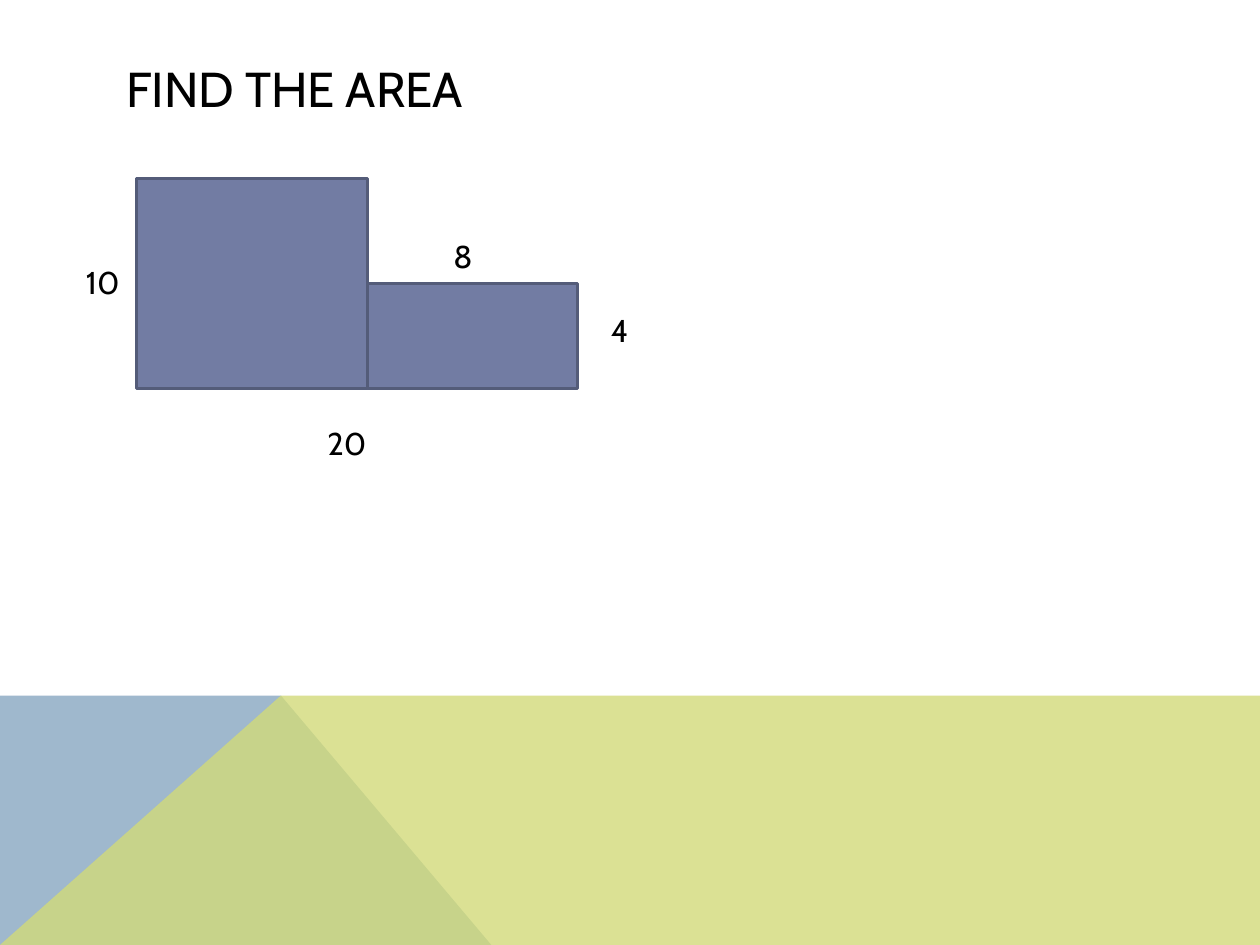
from dataclasses import dataclass

from lxml import etree
from pptx import Presentation
from pptx.dml.color import RGBColor
from pptx.enum.shapes import MSO_SHAPE
from pptx.enum.text import MSO_ANCHOR, MSO_AUTO_SIZE, PP_ALIGN
from pptx.oxml.ns import qn
from pptx.shapes.base import BaseShape
from pptx.slide import Slide
from pptx.text.text import TextFrame
from pptx.util import Inches, Length, Pt

RECTANGLE = MSO_SHAPE.RECTANGLE
MIDDLE, TOP = MSO_ANCHOR.MIDDLE, MSO_ANCHOR.TOP
LEFT = PP_ALIGN.LEFT
NO_AUTOFIT, GROW = MSO_AUTO_SIZE.NONE, MSO_AUTO_SIZE.SHAPE_TO_FIT_TEXT

SLIDE_WIDTH, SLIDE_HEIGHT = Inches(10), Inches(7.5)
TITLE_ONLY_LAYOUT = 5
CELLS_PER_INCH = 12


@dataclass(frozen=True)
class Theme:
    font: str = "Cabin"
    title_size: int = 28
    label_size: int = 18
    line_width: int = 2
    text: str = "000000"
    figure_fill: str = "727CA3"
    figure_line: str = "545C79"
    blue_band: str = "9FB8CD"
    green_band: str = "D2DA7A"


@dataclass(frozen=True)
class Box:
    """A place on the grid, in cells."""
    column: float
    row: float
    columns: float
    rows: float


@dataclass(frozen=True)
class Label:
    text: str
    box: Box


@dataclass(frozen=True)
class Band:
    """A polygon whose points are shares of the slide's width and height."""
    points: tuple[tuple[float, float], ...]
    color: str
    opacity: float = 1


THEME = Theme()

# Footer bands meet at a peak on the horizon
HORIZON, PEAK, BLUE_FOOT = 0.736, 0.223, 0.39
BANDS = (
    Band(((0, 1), (0, HORIZON), (PEAK, HORIZON), (BLUE_FOOT, 1)), THEME.blue_band),
    Band(((0, 1), (PEAK, HORIZON), (1, HORIZON), (1, 1)), THEME.green_band, 0.8),
)

# Compound figure: the short rectangle stands beside the tall one
TALL = Box(13, 17, 22, 20)
SHORT = Box(TALL.column + TALL.columns, 27, 20, 10)

LABELS = (
    Label("20", Box(30, 39.8, 23, 4.8)),
    Label("8", Box(42, 22, 9.5, 4.8)),
    Label("4", Box(57, 29, 7, 4.8)),
    Label("10", Box(7, 24.5, 9, 4.8)),
)
TITLE = Label("FIND THE AREA", Box(10.8, 4.8, 98.6, 7.2))


def cells(count: float) -> Length:
    return Inches(count / CELLS_PER_INCH)


def place(box: Box) -> tuple[Length, Length, Length, Length]:
    return cells(box.column), cells(box.row), cells(box.columns), cells(box.rows)


def write(frame: TextFrame, text: str, size: int) -> None:
    frame.text = text
    frame.word_wrap = True
    paragraph = frame.paragraphs[0]
    paragraph.alignment = LEFT
    paragraph.font.name = THEME.font
    paragraph.font.size = Pt(size)
    paragraph.font.color.rgb = RGBColor.from_string(THEME.text)


def fill_shape(shape: BaseShape, color: str) -> None:
    shape.shadow.inherit = False
    shape.fill.solid()
    shape.fill.fore_color.rgb = RGBColor.from_string(color)


def draw_band(slide: Slide, band: Band) -> None:
    points = [(round(x * SLIDE_WIDTH), round(y * SLIDE_HEIGHT)) for x, y in band.points]
    builder = slide.shapes.build_freeform(*points[0])
    builder.add_line_segments(points[1:], close=True)
    shape = builder.convert_to_shape()
    fill_shape(shape, band.color)
    shape.line.fill.background()
    if band.opacity < 1:
        color = shape.fill._xPr.find(".//" + qn("a:srgbClr"))
        etree.SubElement(color, qn("a:alpha"), val=str(round(band.opacity * 100000)))


def draw_rectangle(slide: Slide, box: Box) -> None:
    shape = slide.shapes.add_shape(RECTANGLE, *place(box))
    fill_shape(shape, THEME.figure_fill)
    shape.line.color.rgb = RGBColor.from_string(THEME.figure_line)
    shape.line.width = Pt(THEME.line_width)


def draw_label(slide: Slide, label: Label) -> None:
    frame = slide.shapes.add_textbox(*place(label.box)).text_frame
    write(frame, label.text, THEME.label_size)
    frame.vertical_anchor = TOP
    frame.auto_size = GROW


def set_title(slide: Slide, label: Label) -> None:
    title = slide.shapes.title
    title.left, title.top, title.width, title.height = place(label.box)
    write(title.text_frame, label.text, THEME.title_size)
    title.text_frame.vertical_anchor = MIDDLE
    title.text_frame.auto_size = NO_AUTOFIT


def main() -> None:
    presentation = Presentation()
    presentation.slide_width, presentation.slide_height = SLIDE_WIDTH, SLIDE_HEIGHT
    slide = presentation.slides.add_slide(presentation.slide_layouts[TITLE_ONLY_LAYOUT])
    set_title(slide, TITLE)
    for band in BANDS:
        draw_band(slide, band)
    for box in (TALL, SHORT):
        draw_rectangle(slide, box)
    for label in LABELS:
        draw_label(slide, label)
    presentation.save("out.pptx")


if __name__ == "__main__":
    main()
